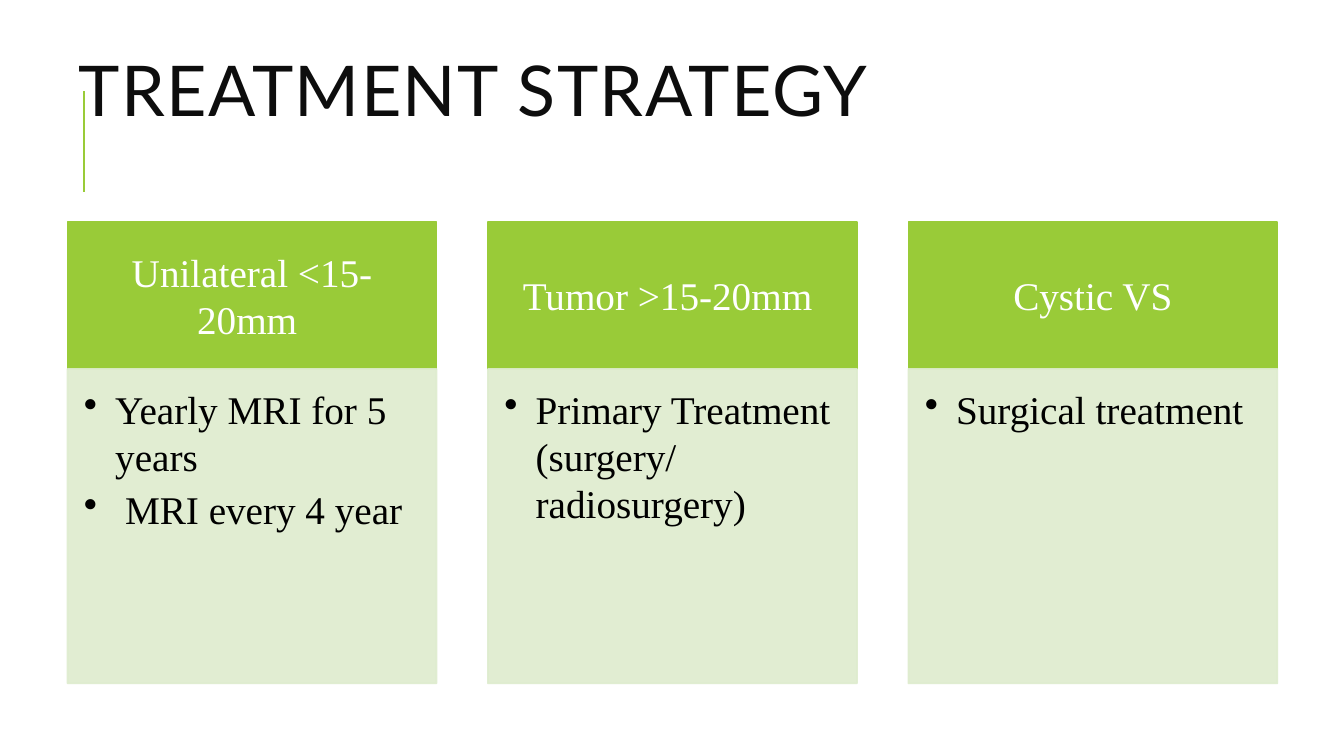
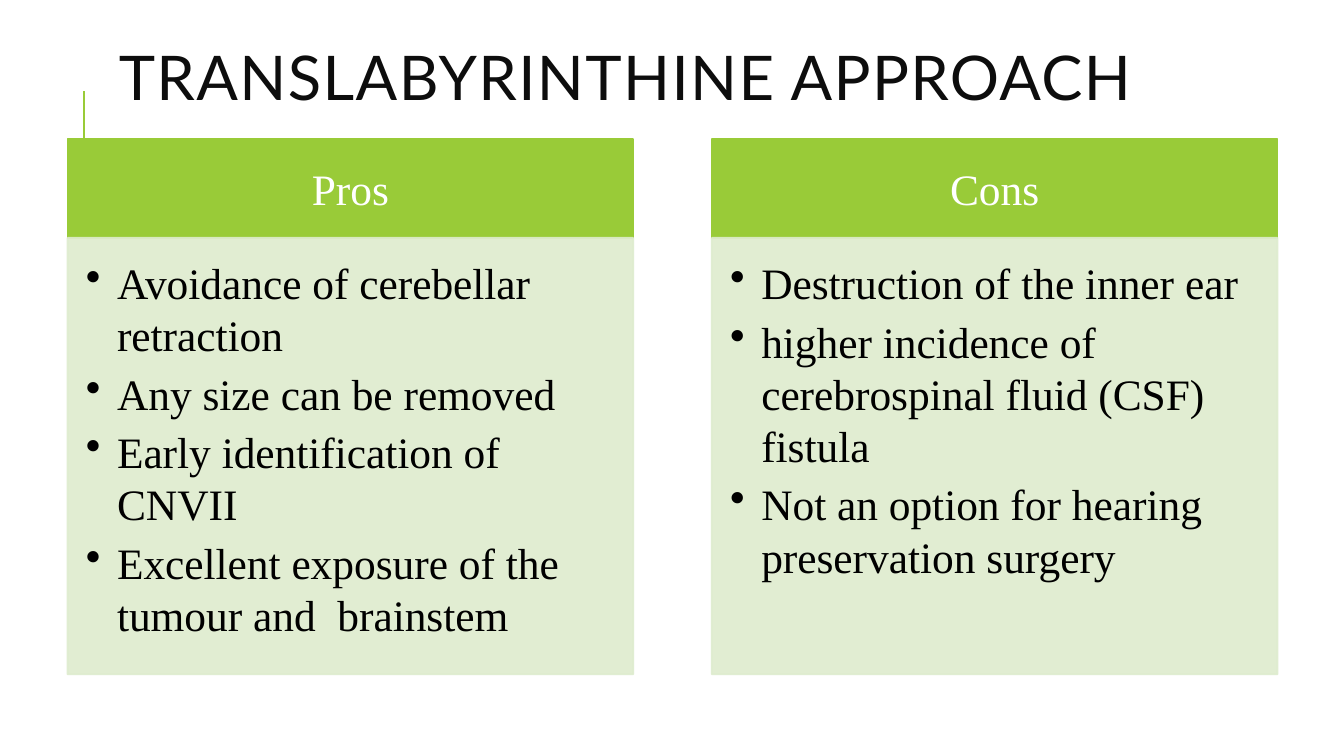
import pptx
import pptx.util
import pptx.dml.color
import pptx.enum.shapes
import pptx.enum.text
import pptx.oxml.ns
from lxml import etree

Inches, Pt = pptx.util.Inches, pptx.util.Pt
ANCHOR = pptx.enum.text.MSO_ANCHOR
ALIGN = pptx.enum.text.PP_ALIGN
qn = pptx.oxml.ns.qn


def rgb(hex_string):
    return pptx.dml.color.RGBColor.from_string(hex_string)


class Deck:
    GREEN, PALE, WHITE = "99CB38", "DEECCE", "FFFFFF"
    INK, BLACK = "0D0D0D", "000000"
    TITLE_FONT, BODY_FONT = "Lato", "Times New Roman"
    LEFT, SPAN = 0.67, 12
    # Left, top, right and bottom insets as a share of the font size
    HEADER_INSETS = (0.56, 0.32, 0.56, 0.32)
    BODY_INSETS = (0.42, 0.42, 0.56, 0.63)

    def __init__(self):
        self.prs = pptx.Presentation()
        self.prs.slide_width = Inches(13.33)
        self.prs.slide_height = Inches(7.5)
        self.s = None

    def new_slide(self):
        """Start a slide with the green accent line."""
        self.s = self.prs.slides.add_slide(self.prs.slide_layouts[6])
        x = Inches(0.83)
        line = self.s.shapes.add_connector(
            pptx.enum.shapes.MSO_CONNECTOR.STRAIGHT, x, Inches(1.9), x, Inches(0.9))
        line.line.color.rgb = rgb(self.GREEN)
        line.line.width = Pt(1.5)
        etree.SubElement(line.element.spPr, qn("a:effectLst"))

    def style(self, p, font, size, color):
        for r in p.runs:
            r.font.name = font
            r.font.size = Pt(size)
            r.font.color.rgb = rgb(color)

    def title(self, text, left, top, size):
        box = self.s.shapes.add_textbox(
            Inches(left), Inches(top), Inches(10.63), Inches(1.64))
        tf = box.text_frame
        tf.word_wrap = True
        tf.vertical_anchor = ANCHOR.MIDDLE
        tf.text = text
        p = tf.paragraphs[0]
        p.line_spacing = 0.8
        self.style(p, self.TITLE_FONT, size, self.INK)
        for r in p.runs:
            r.font._element.set("spc", "100")

    def panel(self, left, top, width, height, color, insets, size):
        sp = self.s.shapes.add_shape(
            pptx.enum.shapes.MSO_SHAPE.RECTANGLE,
            Inches(left), Inches(top), Inches(width), Inches(height))
        sp.shadow.inherit = False
        sp.fill.solid()
        sp.fill.fore_color.rgb = rgb(color)
        sp.line.color.rgb = rgb(color)
        sp.line.width = Pt(1.25)
        tf = sp.text_frame
        tf.word_wrap = True
        tf.margin_left, tf.margin_top, tf.margin_right, tf.margin_bottom = (
            Pt(size * share) for share in insets)
        return sp

    def header(self, text, left, top, width, height, size):
        sp = self.panel(left, top, width, height, self.GREEN, self.HEADER_INSETS, size)
        tf = sp.text_frame
        tf.vertical_anchor = ANCHOR.MIDDLE
        tf.text = text
        p = tf.paragraphs[0]
        p.alignment = ALIGN.CENTER
        self.style(p, self.BODY_FONT, size, self.WHITE)

    def bullets(self, items, left, top, width, height, size):
        sp = self.panel(left, top, width, height, self.PALE, self.BODY_INSETS, size)
        for color in sp.element.spPr.iter(qn("a:srgbClr")):
            etree.SubElement(color, qn("a:alpha"), val="90000")
        tf = sp.text_frame
        tf.vertical_anchor = ANCHOR.TOP
        tf.text = "\n".join(items)
        for p in tf.paragraphs:
            p.alignment = ALIGN.LEFT
            p.space_after = Pt(size * 0.15)
            pPr = p._p.get_or_add_pPr()
            pPr.set("marL", str(Inches(0.31)))
            pPr.set("indent", str(-Inches(0.31)))
            etree.SubElement(pPr, qn("a:buChar"), char="•")
            self.style(p, self.BODY_FONT, size, self.BLACK)

    def columns(self, cards, top, width, header_height, body_height, size):
        """Spread headed bullet cards evenly across the slide."""
        step = (self.SPAN - width) / (len(cards) - 1)
        for i, (heading, items) in enumerate(cards):
            left = self.LEFT + i * step
            self.header(heading, left, top, width, header_height, size)
            self.bullets(items, left, top + header_height, width, body_height, size)


def main():
    deck = Deck()

    deck.new_slide()
    deck.title("TREATMENT STRATEGY", 0.68, 0.14, 50)
    deck.columns([
        ("Unilateral <15-20mm ", ["Yearly MRI for 5 years", " MRI every 4 year"]),
        ("Tumor >15-20mm ", ["Primary Treatment (surgery/ radiosurgery)"]),
        ("Cystic VS", ["Surgical treatment"]),
    ], top=2.2, width=3.66, header_height=1.46, body_height=3.12, size=28)

    deck.new_slide()
    deck.title("TRANSLABYRINTHINE APPROACH", 1.08, 0, 44)
    deck.columns([
        ("Pros", ["Avoidance of cerebellar retraction",
                  "Any size can be removed",
                  "Early identification of CNVII",
                  "Excellent exposure of the tumour and  brainstem"]),
        ("Cons", ["Destruction of the inner ear",
                  "higher incidence of cerebrospinal fluid (CSF) fistula",
                  "Not an option for hearing preservation surgery"]),
    ], top=1.38, width=5.61, header_height=0.98, body_height=4.33, size=31)

    deck.prs.save("out.pptx")


if __name__ == "__main__":
    main()
